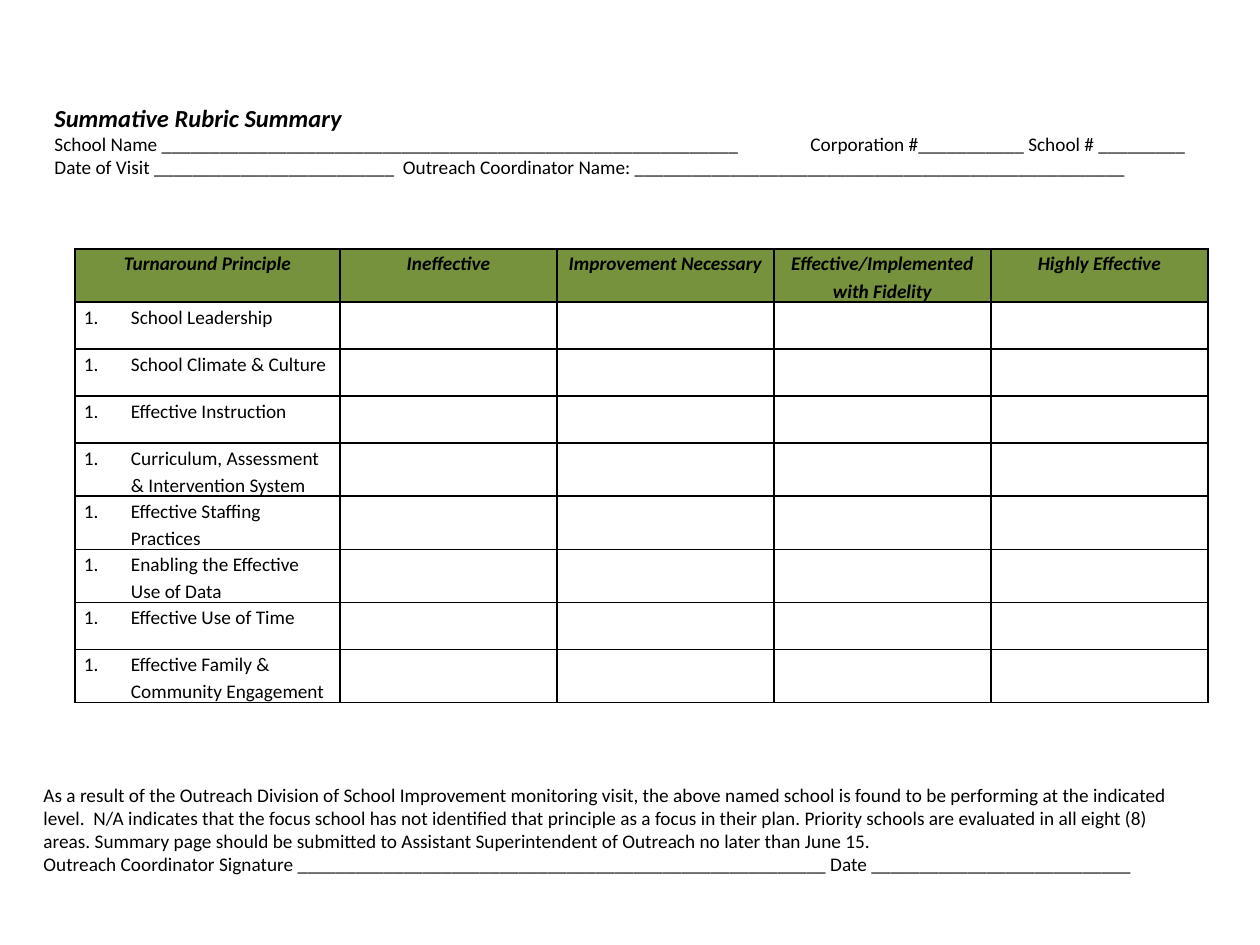
"""Build the Summative Rubric Summary slide with its rating table."""
from lxml.etree import SubElement
from pptx import Presentation
from pptx.dml.color import RGBColor
from pptx.enum.text import MSO_ANCHOR as Anchor, PP_ALIGN as Align
from pptx.oxml.ns import qn
from pptx.util import Pt

PX = 914400 // 126
BLACK = RGBColor(0x00, 0x00, 0x00)
GREEN = RGBColor(0x76, 0x92, 0x3C)
HEADINGS = ["Turnaround Principle", "Ineffective", "Improvement Necessary",
            "Effective/Implemented with Fidelity", "Highly Effective"]
PRINCIPLES = ["School Leadership", "School Climate & Culture", "Effective Instruction",
              "Curriculum, Assessment & Intervention System", "Effective Staffing Practices",
              "Enabling the Effective Use of Data", "Effective Use of Time",
              "Effective Family & Community Engagement"]
FORM_LINES = [
    "School Name " + "_" * 60 + "  \tCorporation #" + "_" * 11 + " School # " + "_" * 9,
    "Date of Visit " + "_" * 25 + "  Outreach Coordinator Name: " + "_" * 51,
]
CLOSING_LINES = [
    "As a result of the Outreach Division of School Improvement monitoring visit, the above "
    "named school is found to be performing at the indicated level.  N/A indicates that the "
    "focus school has not identified that principle as a focus in their plan. Priority schools "
    "are evaluated in all eight (8) areas. Summary page should be submitted to Assistant "
    "Superintendent of Outreach no later than June 15.",
    "Outreach Coordinator Signature " + "_" * 55 + " Date " + "_" * 27,
]


def write(paragraph, text, size=11, emphasis=False, align=Align.LEFT, spacing=1.0):
    paragraph.alignment = align
    paragraph.line_spacing = spacing
    run = paragraph.add_run()
    run.text = text
    font = run.font
    font.name, font.size = "Calibri", Pt(size)
    font.bold = font.italic = emphasis
    font.color.rgb = BLACK


def draw_borders(cell):
    properties = cell._tc.get_or_add_tcPr()
    for position, side in enumerate(["lnL", "lnR", "lnT", "lnB"]):
        line = SubElement(properties, qn(f"a:{side}"), w=str(Pt(1)))
        fill = SubElement(line, qn("a:solidFill"))
        SubElement(fill, qn("a:srgbClr"), val=str(BLACK))
        properties.insert(position, line)


presentation = Presentation()
presentation.slide_width = 1260 * PX
presentation.slide_height = 945 * PX
slide = presentation.slides.add_slide(presentation.slide_layouts[6])

header = slide.shapes.add_textbox(42 * PX, 103 * PX, 1167 * PX, 150 * PX).text_frame
header.word_wrap = True
header.vertical_anchor = Anchor.TOP
header.margin_top = 0
write(header.paragraphs[0], "Summative Rubric Summary", size=14, emphasis=True)
for text in FORM_LINES:
    write(header.add_paragraph(), text)

table = slide.shapes.add_table(len(PRINCIPLES) + 1, len(HEADINGS),
                               75 * PX, 249 * PX, 1133 * PX, 423 * PX).table
for index, column in enumerate(table.columns):
    column.width = (217 if index else 265) * PX
for row in table.rows:
    row.height = 47 * PX
    for cell in row.cells:
        cell.margin_left = cell.margin_right = 9 * PX
        cell.margin_top = cell.margin_bottom = 0
        cell.fill.background()
        draw_borders(cell)

for index, heading in enumerate(HEADINGS):
    cell = table.cell(0, index)
    cell.fill.solid()
    cell.fill.fore_color.rgb = GREEN
    write(cell.text_frame.paragraphs[0], heading, emphasis=True,
          align=Align.CENTER, spacing=1.15)

for index, principle in enumerate(PRINCIPLES, start=1):
    paragraph = table.cell(index, 0).text_frame.paragraphs[0]
    write(paragraph, principle, spacing=1.15)
    properties = paragraph._p.get_or_add_pPr()
    properties.set("marL", str(47 * PX))
    properties.set("indent", str(-47 * PX))
    SubElement(properties, qn("a:buFont"), typeface="+mj-lt")
    SubElement(properties, qn("a:buAutoNum"), type="arabicPeriod")

closing = slide.shapes.add_textbox(31 * PX, 777 * PX, 1166 * PX, 106 * PX).text_frame
closing.word_wrap = True
write(closing.paragraphs[0], CLOSING_LINES[0])
write(closing.add_paragraph(), CLOSING_LINES[1])

presentation.save("out.pptx")
